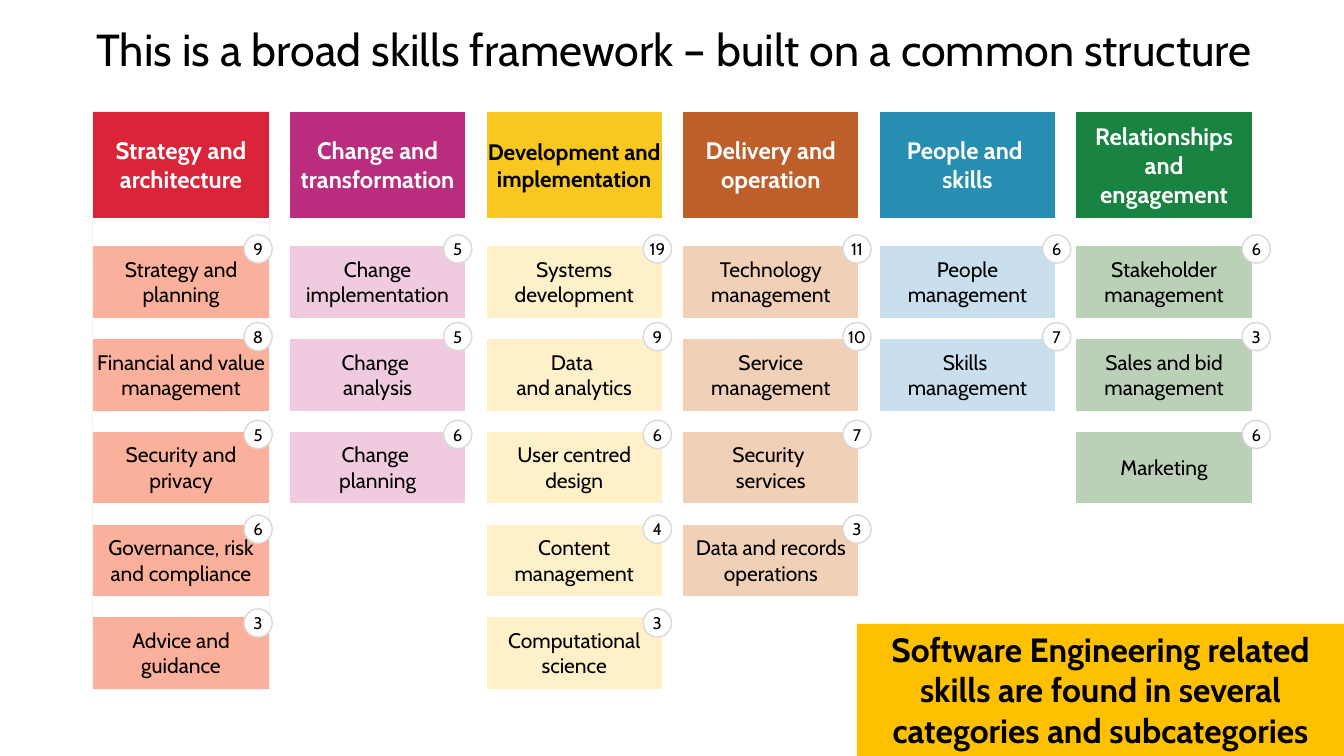
import lxml.etree
import pptx
import pptx.dml.color
import pptx.enum.shapes
import pptx.enum.text
import pptx.oxml.ns
import pptx.util

Inches, Pt = pptx.util.Inches, pptx.util.Pt
MIDDLE = pptx.enum.text.MSO_ANCHOR.MIDDLE
CENTER = pptx.enum.text.PP_ALIGN.CENTER
SHAPE = pptx.enum.shapes.MSO_SHAPE
qn = pptx.oxml.ns.qn

FONT = "Cabin"
COLORS = {"black": "000000", "white": "FFFFFF", "frame": "F2F2F2",
          "ring": "D9D9D9", "callout": "FFC000"}
SLIDE_W, SLIDE_H = 13.33, 7.5

# Boxes are left, top, width, height in inches
TITLE_BOX = (0.66, 0.14, 12.16, 0.75)
TABLE_BOX = (0.92, 1.11, 11.5, 5.73)
CALLOUT_BOX = (8.5, 6.19, SLIDE_W - 8.5, SLIDE_H - 6.19)

COL_W, COL_GAP = 1.75, 0.2
ROW_H, ROW_GAP = 0.72, 0.2
HEAD_H, HEAD_GAP = 1.06, 0.27
BADGE = 0.28
BADGE_LEFT, BADGE_STEP = 1.5, 1.98
BADGE_TOPS = [1.22, 2.09, 3.06, 4, 4.93]

# Heading, heading fill, subcategory fill, subcategories with their skill counts
CATEGORIES = [
    ("Strategy and architecture", "D92439", "FBB09B",
     [("Strategy and planning", 9), ("Financial and value management", 8),
      ("Security and privacy", 5), ("Governance, risk and compliance", 6),
      ("Advice and guidance", 3)]),
    ("Change and transformation", "B92C7E", "F0CBE0",
     [("Change implementation", 5), ("Change \nanalysis", 5),
      ("Change \nplanning", 6)]),
    ("Development and implementation", "F8C720", "FEF1C9",
     [("Systems development", 19), ("Data \nand analytics", 9),
      ("User centred design", 6), ("Content management", 4),
      ("Computational science", 3)]),
    ("Delivery and operation", "BE5F2B", "F1D0B8",
     [("Technology management", 11), ("Service management", 10),
      ("Security \nservices", 7), ("Data and records operations", 3)]),
    ("People and \nskills", "268EB1", "CADFEE",
     [("People management", 6), ("Skills \nmanagement", 7)]),
    ("Relationships and engagement", "198342", "BBD1B7",
     [("Stakeholder management", 6), ("Sales and bid management", 3),
      ("Marketing", 6)]),
]


def rgb(value):
    return pptx.dml.color.RGBColor.from_string(value)


def write(tf, text, size, color="black", bold=False):
    p = tf.paragraphs[0]
    p.text = text
    p.alignment = CENTER
    for r in p.runs:
        r.font.name, r.font.size, r.font.bold = FONT, Pt(size), bold
        r.font.color.rgb = rgb(COLORS[color])
    return p


def set_margins(item, left, top, right, bottom):
    item.margin_left, item.margin_top = Inches(left), Inches(top)
    item.margin_right, item.margin_bottom = Inches(right), Inches(bottom)


def set_borders(cell, **sides):
    """Draw 1 pt borders; they must precede the fill in the cell's XML."""
    tc_pr = cell._tc.get_or_add_tcPr()
    for i, side in enumerate("LRTB"):
        ln = lxml.etree.Element(qn(f"a:ln{side}"), w=str(Pt(1)))
        fill = lxml.etree.SubElement(ln, qn("a:solidFill"))
        lxml.etree.SubElement(fill, qn("a:srgbClr"),
                              val=COLORS[sides.get(side, "white")])
        tc_pr.insert(i, ln)


def fill_cell(cell, text, fill, **style):
    cell.fill.solid()
    cell.fill.fore_color.rgb = rgb(fill)
    cell.vertical_anchor = MIDDLE
    set_margins(cell, 0.01, 0.01, 0.01, 0)
    write(cell.text_frame, text, **style)


def add_title(s, box, text):
    title = s.shapes.title
    title.left, title.top, title.width, title.height = map(Inches, box)
    tf = title.text_frame
    tf.word_wrap = True
    tf.vertical_anchor = MIDDLE
    set_margins(tf, 0.1, 0.08, 0.1, 0.08)
    write(tf, text, 32).line_spacing = 0.9


def add_category_table(s, box):
    depth = max(len(items) for *_, items in CATEGORIES)
    widths = ([COL_W, COL_GAP] * len(CATEGORIES))[:-1]
    heights = [HEAD_H, HEAD_GAP] + ([ROW_H, ROW_GAP] * depth)[:-1]
    table = s.shapes.add_table(len(heights), len(widths),
                               *map(Inches, box)).table
    table.first_row = table.horz_banding = False
    for col, width in zip(table.columns, widths):
        col.width = Inches(width)
    for row, height in zip(table.rows, heights):
        row.height = Inches(height)

    last = len(heights) - 1
    for i, row in enumerate(table.rows):
        for j, cell in enumerate(row.cells):
            cell.fill.solid()
            cell.fill.fore_color.rgb = rgb(COLORS["white"])
            set_margins(cell, 0, 0, 0, 0)
            end = lxml.etree.SubElement(cell.text_frame.paragraphs[0]._p,
                                        qn("a:endParaRPr"))
            end.set("sz", "800")
            sides = {"L": "frame"} if j < 2 else {}
            if j == 0:
                sides["R"] = "frame"
                if i == 0:
                    sides["T"] = "frame"
                if i == last:
                    sides["B"] = "frame"
            set_borders(cell, **sides)

    for k, (heading, head_fill, item_fill, items) in enumerate(CATEGORIES):
        on_yellow = heading.startswith("Development")
        head = table.cell(0, 2 * k)
        fill_cell(head, heading, head_fill, size=16 if on_yellow else 17,
                  color="black" if on_yellow else "white", bold=True)
        if heading.startswith("Relationships"):
            set_margins(head, 0.08, 0.01, 0.08, 0)
        for n, (name, _) in enumerate(items):
            fill_cell(table.cell(2 + 2 * n, 2 * k), name, item_fill, size=15)


def add_box(s, kind, box, fill):
    sp = s.shapes.add_shape(kind, *map(Inches, box))
    sp.shadow.inherit = False
    sp.fill.solid()
    sp.fill.fore_color.rgb = rgb(COLORS[fill])
    sp.line.fill.background()
    return sp


def add_callout(s, box, text):
    sp = add_box(s, SHAPE.RECTANGLE, box, "callout")
    tf = sp.text_frame
    tf.word_wrap = True
    tf.vertical_anchor = pptx.enum.text.MSO_ANCHOR.TOP
    write(tf, text, 24, bold=True)


def add_badges(s, box):
    """Place a skill count at the top right corner of each subcategory."""
    left, top, *_ = box
    for k, (*_, items) in enumerate(CATEGORIES):
        for (_, count), offset in zip(items, BADGE_TOPS):
            x = left + BADGE_LEFT + k * BADGE_STEP
            sp = add_box(s, SHAPE.OVAL, (x, top + offset, BADGE, BADGE), "white")
            sp.line.color.rgb = rgb(COLORS["ring"])
            sp.line.width = Pt(1)
            tf = sp.text_frame
            tf.word_wrap = False
            tf.vertical_anchor = MIDDLE
            set_margins(tf, 0, 0, 0, 0)
            write(tf, str(count), 12)


def main():
    prs = pptx.Presentation()
    prs.slide_width, prs.slide_height = Inches(SLIDE_W), Inches(SLIDE_H)
    s = prs.slides.add_slide(prs.slide_layouts[5])
    add_title(s, TITLE_BOX, "This is a broad skills framework – "
                            "built on a common structure ")
    add_category_table(s, TABLE_BOX)
    add_callout(s, CALLOUT_BOX, "Software Engineering related skills are found "
                                "in several categories and subcategories")
    add_badges(s, TABLE_BOX)
    prs.save("out.pptx")


if __name__ == "__main__":
    main()
